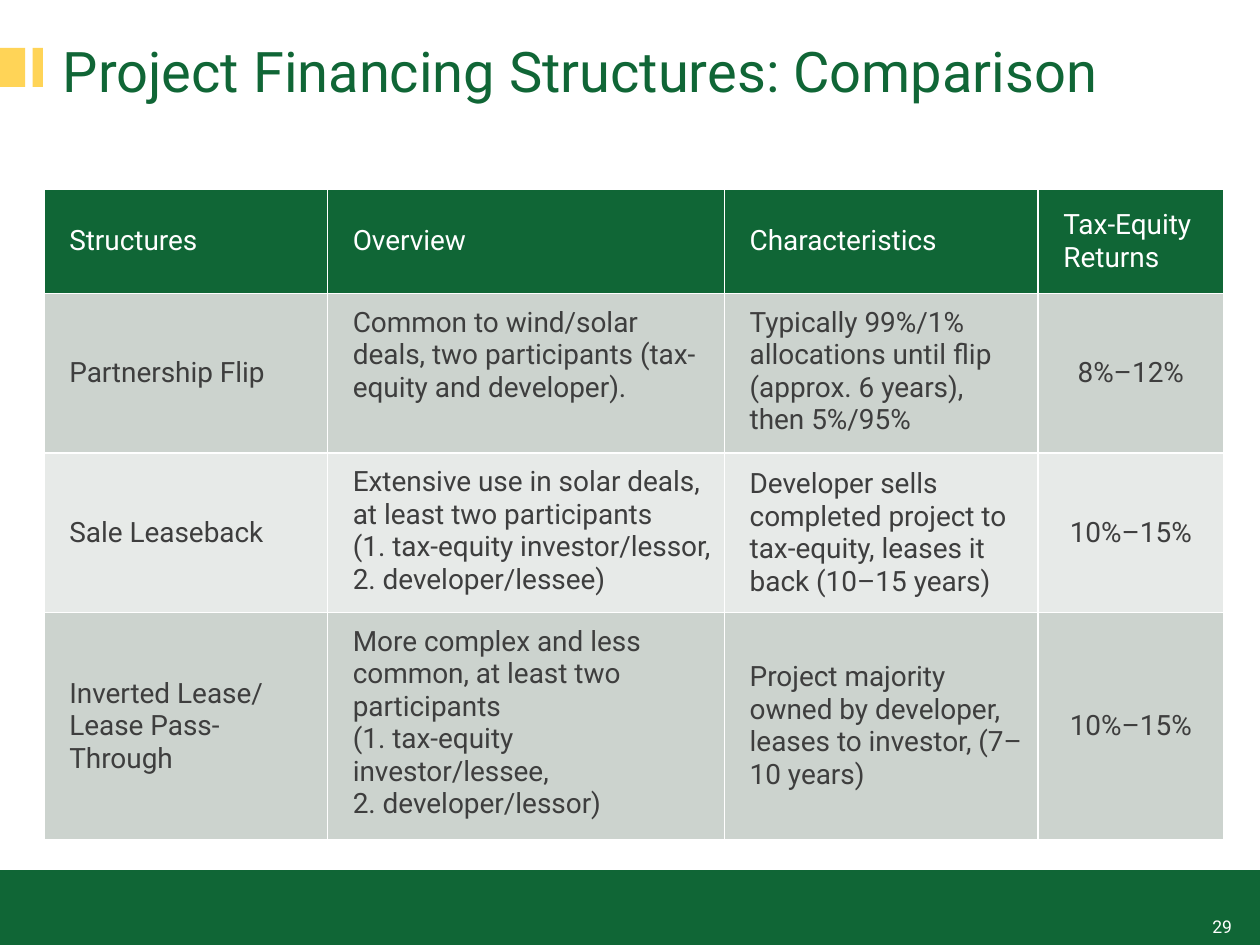
"""Build a slide that compares project financing structures in a table."""
from dataclasses import dataclass

from lxml.etree import SubElement
from pptx import Presentation
from pptx.dml.color import RGBColor
from pptx.enum.shapes import MSO_CONNECTOR as Connector, MSO_SHAPE as Preset
from pptx.enum.text import MSO_ANCHOR as Anchor, PP_ALIGN as Align
from pptx.oxml.ns import qn
from pptx.util import Inches, Pt

GREEN = RGBColor(0x10, 0x66, 0x36)
YELLOW = RGBColor(0xFF, 0xD4, 0x57)
WHITE = RGBColor(0xFF, 0xFF, 0xFF)
CHARCOAL = RGBColor(0x3E, 0x3E, 0x3E)
SAGE = RGBColor(0xCC, 0xD3, 0xCE)
MIST = RGBColor(0xE7, 0xEA, 0xE8)
FONT = "Roboto"
FOOTER_TOP = 6.91


@dataclass(frozen=True)
class Box:
    left: float
    top: float
    width: float
    height: float

    def lengths(self) -> list:
        return [Inches(n) for n in (self.left, self.top, self.width, self.height)]


@dataclass(frozen=True)
class Band:
    box: Box
    color: RGBColor


@dataclass(frozen=True)
class Structure:
    name: str
    overview: str
    characteristics: str
    returns: str

    def texts(self) -> tuple:
        return self.name, self.overview, self.characteristics, self.returns


BANDS = [
    Band(Box(0, FOOTER_TOP, 10, 0.6), GREEN),
    Band(Box(0, 0.38, 0.2, 0.31), YELLOW),
    Band(Box(0.26, 0.38, 0.08, 0.31), YELLOW),
]
COLUMN_WIDTHS = [2.25, 3.15, 2.49, 1.47]
ROW_HEIGHTS = [0.83, 1.23, 1.23, 1.75]
STRUCTURES = [
    Structure("Structures", "Overview", "Characteristics", "Tax-Equity Returns"),
    Structure(
        "Partnership Flip",
        "Common to wind/solar deals, two participants (tax-equity and developer).",
        "Typically 99%/1% allocations until flip (approx. 6 years),\vthen 5%/95%",
        "8%–12%",
    ),
    Structure(
        "Sale Leaseback",
        "Extensive use in solar deals, at least two participants\n"
        "(1. tax-equity investor/lessor,\n2. developer/lessee)",
        "Developer sells completed project to tax-equity, leases it back (10–15 years)",
        "10%–15%",
    ),
    Structure(
        "Inverted Lease/\nLease Pass-Through",
        "More complex and less common, at least two participants\v"
        "(1. tax-equity investor/lessee,\v2. developer/lessor)",
        "Project majority owned by developer, leases to investor, (7–10 years)",
        "10%–15%",
    ),
]


def write(frame, text: str, size: float, color: RGBColor, align=Align.LEFT) -> None:
    frame.word_wrap = True
    frame.text = text
    for paragraph in frame.paragraphs:
        paragraph.alignment = align
        for run in paragraph.runs:
            for key, value in {"name": FONT, "size": Pt(size)}.items():
                setattr(run.font, key, value)
            run.font.color.rgb = color


def draw_band(slide, band: Band) -> None:
    bar = slide.shapes.add_shape(Preset.RECTANGLE, *band.box.lengths())
    bar.shadow.inherit = False
    bar.fill.solid()
    bar.fill.fore_color.rgb = band.color
    bar.line.fill.background()


def draw_footer_rule(slide) -> None:
    y = Inches(FOOTER_TOP)
    rule = slide.shapes.add_connector(Connector.STRAIGHT, 0, y, Inches(10), y)
    rule.line.color.rgb = GREEN
    rule.line.width = Pt(0.5)
    SubElement(rule._element.spPr, qn("a:effectLst"))


def draw_text(slide, box: Box, text: str, size: float, color: RGBColor,
              align, frame_format: dict) -> None:
    frame = slide.shapes.add_textbox(*box.lengths()).text_frame
    for key, value in frame_format.items():
        setattr(frame, key, value)
    write(frame, text, size, color, align)


def add_borders(cell) -> None:
    properties = cell._tc.get_or_add_tcPr()
    for side in ("lnL", "lnR", "lnT", "lnB"):
        border = SubElement(properties, qn(f"a:{side}"), w=str(Pt(1)))
        fill = SubElement(border, qn("a:solidFill"))
        SubElement(fill, qn("a:srgbClr"), val=str(WHITE))


def format_cell(cell, text: str, row: int, column: int) -> None:
    header = row == 0
    returns = column == 3 and not header
    padding = Inches(0.08 if header else 0.1)
    cell_format = {
        "margin_left": Inches(0.1 if returns else 0.2),
        "margin_right": Inches(0.1),
        "margin_top": padding,
        "margin_bottom": padding,
        "vertical_anchor": Anchor.MIDDLE,
    }
    if (row, column) == (1, 2) or (column == 1 and not header):
        cell_format["vertical_anchor"] = Anchor.TOP
    for key, value in cell_format.items():
        setattr(cell, key, value)
    add_borders(cell)
    cell.fill.solid()
    cell.fill.fore_color.rgb = GREEN if header else SAGE if row % 2 else MIST
    write(cell.text_frame, text, 16, WHITE if header else CHARCOAL,
          Align.CENTER if returns else Align.LEFT)


def draw_comparison(slide) -> None:
    box = Box(0.35, 1.5, sum(COLUMN_WIDTHS), sum(ROW_HEIGHTS))
    comparison = slide.shapes.add_table(
        len(ROW_HEIGHTS), len(COLUMN_WIDTHS), *box.lengths()).table
    for column, width in zip(comparison.columns, COLUMN_WIDTHS):
        column.width = Inches(width)
    for row, height in zip(comparison.rows, ROW_HEIGHTS):
        row.height = Inches(height)
    for r, structure in enumerate(STRUCTURES):
        for c, text in enumerate(structure.texts()):
            format_cell(comparison.cell(r, c), text, r, c)


def main() -> None:
    deck = Presentation()
    deck.slide_width, deck.slide_height = Inches(10), Inches(7.5)
    slide = deck.slides.add_slide(deck.slide_layouts[6])
    for band in BANDS:
        draw_band(slide, band)
    draw_footer_rule(slide)
    draw_text(slide, Box(0.4, 0.19, 9, 1.08), "Project Financing Structures: Comparison",
              32, GREEN, Align.LEFT, {"margin_top": Inches(0.1)})
    draw_comparison(slide)
    draw_text(slide, Box(9.4, 7.21, 0.6, 0.29), "29", 10, WHITE, Align.CENTER,
              {"vertical_anchor": Anchor.MIDDLE})
    deck.save("out.pptx")


if __name__ == "__main__":
    main()
